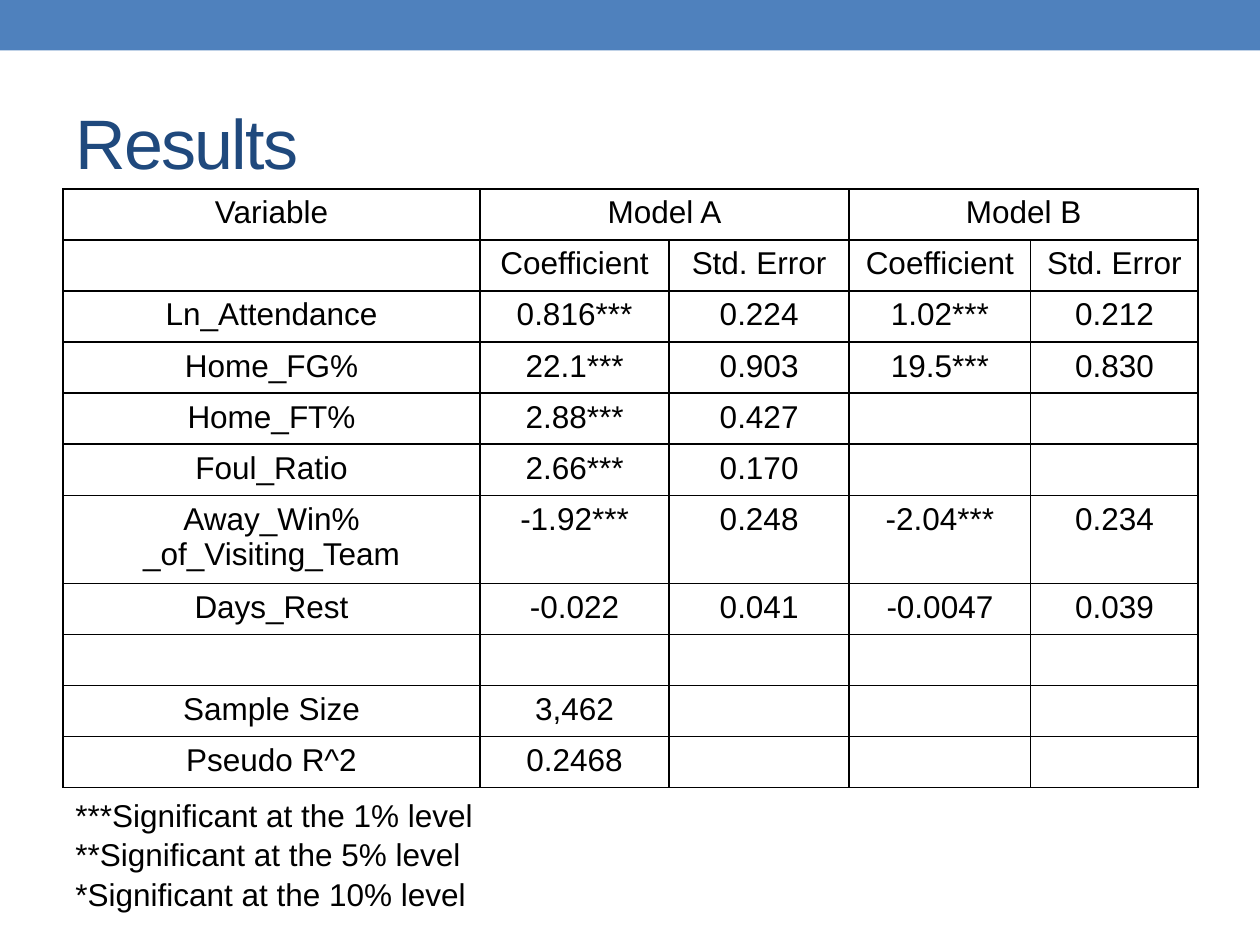
from lxml.etree import SubElement
from pptx import Presentation
from pptx.dml.color import RGBColor
from pptx.enum.shapes import MSO_SHAPE
from pptx.enum.text import MSO_ANCHOR, PP_ALIGN
from pptx.oxml.ns import qn
from pptx.util import Inches, Pt

BLUE, NAVY, BLACK = "4F81BD", "1F497D", "000000"
BODY = {"name": "Arial", "size": Pt(18)}
TITLE = {"name": "Arial", "size": Pt(40)}

COLUMN_WIDTHS = [3.31, 1.5, 1.43, 1.44, 1.33]
ROWS = [
    ["Variable", "Model A", "", "Model B", ""],
    ["", "Coefficient", "Std. Error", "Coefficient", "Std. Error"],
    ["Ln_Attendance", "0.816***", "0.224", "1.02***", "0.212"],
    ["Home_FG%", "22.1***", "0.903", "19.5***", "0.830"],
    ["Home_FT%", "2.88***", "0.427", "", ""],
    ["Foul_Ratio", "2.66***", "0.170", "", ""],
    ["Away_Win%\n_of_Visiting_Team", "-1.92***", "0.248", "-2.04***", "0.234"],
    ["Days_Rest", "-0.022", "0.041", "-0.0047", "0.039"],
    ["", "", "", "", ""],
    ["Sample Size", "3,462", "", "", ""],
    ["Pseudo R^2", "0.2468", "", "", ""],
]
TALL_ROW = 6
NOTES = "\n".join([
    "***Significant at the 1% level",
    "**Significant at the 5% level",
    "*Significant at the 10% level",
])


def color(hex_string):
    return RGBColor.from_string(hex_string)


def write(text_frame, text, font, hex_string, **paragraph_format):
    """Fill a text frame, one paragraph for each line of text."""
    text_frame.text = text
    for paragraph in text_frame.paragraphs:
        for name, value in paragraph_format.items():
            setattr(paragraph, name, value)
        for run in paragraph.runs:
            for name, value in font.items():
                setattr(run.font, name, value)
            run.font.color.rgb = color(hex_string)


def add_text(slide, box, text, font, hex_string, **paragraph_format):
    shape = slide.shapes.add_textbox(*map(Inches, box))
    shape.text_frame.word_wrap = True
    write(shape.text_frame, text, font, hex_string, **paragraph_format)
    return shape.text_frame


def add_band(slide, box):
    shape = slide.shapes.add_shape(MSO_SHAPE.RECTANGLE, *map(Inches, box))
    shape.shadow.inherit = False
    shape.fill.solid()
    shape.fill.fore_color.rgb = color(BLUE)
    shape.line.fill.background()


def add_title(slide, box):
    text_frame = add_text(slide, box, "Results", TITLE, NAVY)
    text_frame.vertical_anchor = MSO_ANCHOR.MIDDLE
    # Tighten the letters by one point
    run = text_frame.paragraphs[0].runs[0]
    run.font._element.set("spc", "-100")


def add_borders(cell):
    properties = cell._tc.get_or_add_tcPr()
    for side in ("a:lnL", "a:lnR", "a:lnT", "a:lnB"):
        line = SubElement(properties, qn(side), w=str(Pt(1)))
        fill = SubElement(line, qn("a:solidFill"))
        SubElement(fill, qn("a:srgbClr"), val=BLACK)


def add_results_table(slide, box):
    table = slide.shapes.add_table(
        len(ROWS), len(COLUMN_WIDTHS), *map(Inches, box)).table
    table.first_row = table.horz_banding = False
    for column, width in zip(table.columns, COLUMN_WIDTHS):
        column.width = Inches(width)
    table.rows[TALL_ROW].height = Inches(0.66)

    for row, texts in zip(table.rows, ROWS):
        for cell, text in zip(row.cells, texts):
            write(cell.text_frame, text, BODY, BLACK, alignment=PP_ALIGN.CENTER)
            add_borders(cell)
            cell.fill.background()

    # Each model heading spans its coefficient and error columns
    for first in (1, 3):
        table.cell(0, first).merge(table.cell(0, first + 1))


def main():
    presentation = Presentation()
    presentation.slide_width, presentation.slide_height = Inches(10), Inches(7.5)
    slide = presentation.slides.add_slide(presentation.slide_layouts[6])

    add_band(slide, (0, 0, 10, 0.4))
    add_title(slide, (0.5, 0.58, 9, 1.08))
    add_results_table(slide, (0.5, 1.5, 9, 4.46))
    # Significance levels
    add_text(slide, (0.5, 6.25, 4.44, 1.01), NOTES, BODY, BLACK, line_spacing=1.05)

    presentation.save("out.pptx")


if __name__ == "__main__":
    main()
